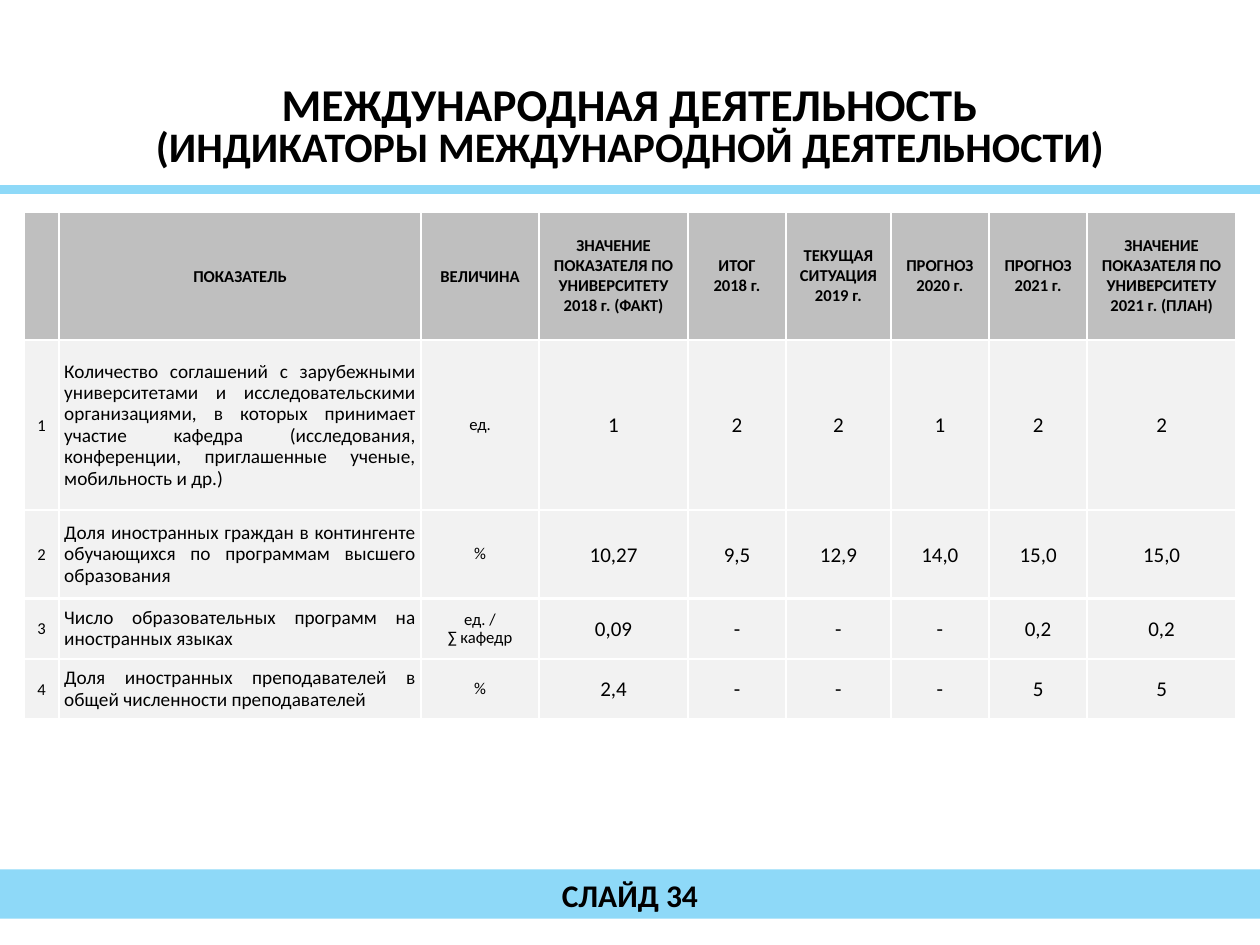
from lxml import etree
from pptx import Presentation
from pptx.dml.color import RGBColor
from pptx.enum import shapes, text
from pptx.oxml.ns import qn
from pptx.util import Inches, Pt

COLORS = {"bar": "8ED9F8", "header": "BFBFBF", "body": "F2F2F2",
          "border": "FFFFFF", "text": "000000"}
CENTER, JUSTIFY = text.PP_ALIGN.CENTER, text.PP_ALIGN.JUSTIFY


def write(tf, lines, size, bold=False, align=CENTER, spacing=None):
    tf.word_wrap = True
    for i, line in enumerate(lines):
        p = tf.paragraphs[0] if i == 0 else tf.add_paragraph()
        p.text = line
        p.alignment = align
        if spacing:
            p.line_spacing = spacing
        p.font.name = "Calibri"
        p.font.size = Pt(size)
        p.font.bold = bold
        p.font.color.rgb = RGBColor.from_string(COLORS["text"])


def format_cell(cell, fill, insets):
    """Set fill, insets (left, top, right, bottom) and white borders."""
    cell.fill.solid()
    cell.fill.fore_color.rgb = RGBColor.from_string(COLORS[fill])
    cell.vertical_anchor = text.MSO_ANCHOR.MIDDLE
    (cell.margin_left, cell.margin_top,
     cell.margin_right, cell.margin_bottom) = map(Inches, insets)
    tc_pr = cell._tc.get_or_add_tcPr()
    for i, side in enumerate(("lnL", "lnR", "lnT", "lnB")):
        ln = etree.Element(qn("a:" + side), w=str(Pt(1.5)))
        line_fill = etree.SubElement(ln, qn("a:solidFill"))
        etree.SubElement(line_fill, qn("a:srgbClr"), val=COLORS["border"])
        tc_pr.insert(i, ln)


prs = Presentation()
prs.slide_width, prs.slide_height = Inches(10), Inches(7.5)
s = prs.slides.add_slide(prs.slide_layouts[5])

# Divider and footer bars
for top, height in ((1.47, 0.07), (6.9, 0.39)):
    bar = s.shapes.add_shape(shapes.MSO_SHAPE.RECTANGLE, 0, Inches(top),
                             prs.slide_width, Inches(height))
    bar.shadow.inherit = False
    bar.fill.solid()
    bar.fill.fore_color.rgb = RGBColor.from_string(COLORS["bar"])
    bar.line.fill.background()

# Title
title = s.shapes.title
title.left, title.top = 0, Inches(0.65)
title.width, title.height = prs.slide_width, Inches(0.74)
tf = title.text_frame
tf.auto_size = text.MSO_AUTO_SIZE.NONE
tf.vertical_anchor = text.MSO_ANCHOR.MIDDLE
write(tf, ["МЕЖДУНАРОДНАЯ ДЕЯТЕЛЬНОСТЬ",
           "(ИНДИКАТОРЫ МЕЖДУНАРОДНОЙ ДЕЯТЕЛЬНОСТИ)"], 26, True, spacing=0.8)
tf.paragraphs[1].font.size = Pt(24)

# Slide label
label = s.shapes.add_textbox(0, Inches(6.9), prs.slide_width, Inches(0.4))
label.text_frame.vertical_anchor = text.MSO_ANCHOR.MIDDLE
write(label.text_frame, ["СЛАЙД 34"], 18, True)

# Indicator table
headers = ["", "ПОКАЗАТЕЛЬ", "ВЕЛИЧИНА",
           "ЗНАЧЕНИЕ ПОКАЗАТЕЛЯ ПО УНИВЕРСИТЕТУ 2018 г. (ФАКТ)",
           "ИТОГ\n2018 г.", "ТЕКУЩАЯ СИТУАЦИЯ\n2019 г.",
           "ПРОГНОЗ\n2020 г.", "ПРОГНОЗ\n2021 г.",
           "ЗНАЧЕНИЕ ПОКАЗАТЕЛЯ ПО УНИВЕРСИТЕТУ 2021 г. (ПЛАН)"]
indicators = [
    ("Количество соглашений с зарубежными университетами и исследовательскими "
     "организациями, в которых принимает участие кафедра (исследования, "
     "конференции, приглашенные ученые, мобильность и др.)",
     "ед.", "1", "2", "2", "1", "2", "2"),
    ("Доля иностранных граждан в контингенте обучающихся по программам "
     "высшего образования",
     "%", "10,27", "9,5", "12,9", "14,0", "15,0", "15,0"),
    ("Число образовательных программ на иностранных языках",
     "ед. /\n∑ кафедр", "0,09", "-", "-", "-", "0,2", "0,2"),
    ("Доля иностранных преподавателей в общей численности преподавателей",
     "%", "2,4", "-", "-", "-", "5", "5"),
]
col_widths = [0.28, 2.87, 0.94, 1.18, 0.78, 0.83, 0.78, 0.78, 1.18]
row_heights = [1.02, 1.35, 0.7, 0.48, 0.48]
tight, wide = (0.01, 0.01, 0.01, 0), (0.1, 0.05, 0.1, 0.05)

table = s.shapes.add_table(len(row_heights), len(col_widths), Inches(0.19),
                           Inches(1.68), Inches(9.61), Inches(4.04)).table
for column, width in zip(table.columns, col_widths):
    column.width = Inches(width)
for row, height in zip(table.rows, row_heights):
    row.height = Inches(height)

for c, header in enumerate(headers):
    cell = table.cell(0, c)
    format_cell(cell, "header", tight if c in (1, 2) else wide)
    write(cell.text_frame, header.split("\n"), 9.5, True)

# Size, alignment, line spacing and insets by column
body_styles = [(9.5, CENTER, 0.9, tight),
               (11, JUSTIFY, 0.9, (0.04, 0.02, 0.04, 0.02)),
               (9.5, CENTER, 0.9, (0.02, 0.02, 0.02, 0.02))]
body_styles += [(12, CENTER, None, tight)] * 6
for r, indicator in enumerate(indicators, start=1):
    for c, value in enumerate((str(r), *indicator)):
        size, align, spacing, insets = body_styles[c]
        cell = table.cell(r, c)
        format_cell(cell, "body", insets)
        write(cell.text_frame, value.split("\n"), size, False, align, spacing)

prs.save("out.pptx")
